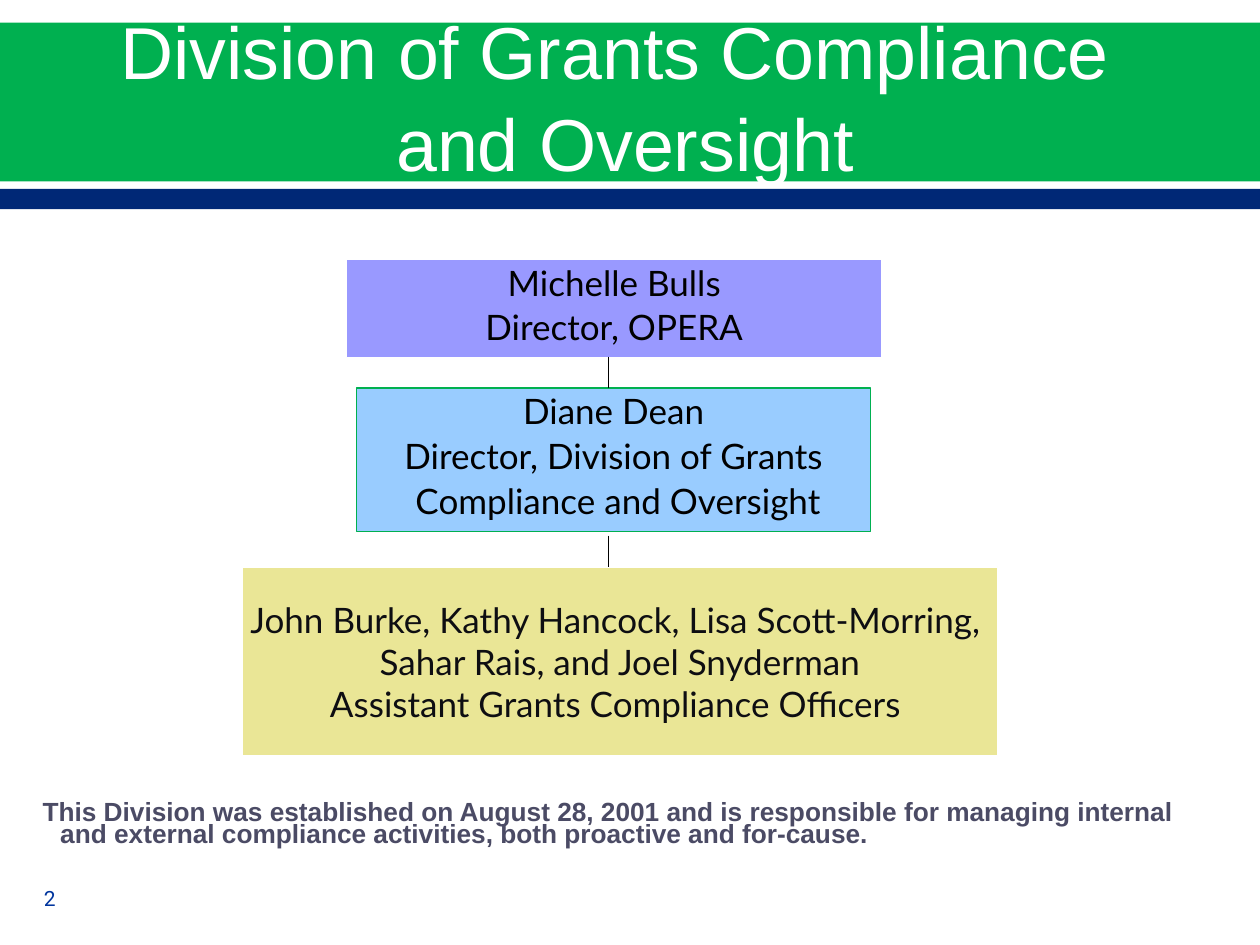
from lxml.etree import SubElement
from pptx import Presentation
from pptx.dml.color import RGBColor
from pptx.enum.shapes import MSO_CONNECTOR, MSO_SHAPE
from pptx.enum.text import MSO_ANCHOR, MSO_AUTO_SIZE, PP_ALIGN
from pptx.oxml.ns import qn
from pptx.util import Inches, Pt

COLORS = {
    "green": "00B050", "navy": "002876", "white": "FFFFFF", "black": "000000",
    "violet": "9999FF", "sky": "99CCFF", "sand": "EAE696", "ink": "0E0E12",
    "slate": "4B4B65", "blue": "00359E",
}


def color(name):
    """Return the named colour."""
    return RGBColor.from_string(COLORS[name])


def style_text(frame, font, size, ink, align=PP_ALIGN.LEFT, bold=False, spacing=None, before=0):
    """Format every paragraph and run of a text frame."""
    for para in frame.paragraphs:
        para.alignment = align
        para.line_spacing = spacing
        para.space_before = Pt(before)
        for span in para.runs:
            span.font.name = font
            span.font.size = Pt(size)
            span.font.bold = bold
            span.font.color.rgb = color(ink)


def add_rectangle(page, left, top, width, height, fill, line=None):
    """Add a flat rectangle, outlined if a line colour is given."""
    box = page.shapes.add_shape(
        MSO_SHAPE.RECTANGLE, Inches(left), Inches(top), Inches(width), Inches(height))
    box.shadow.inherit = False
    box.fill.solid()
    box.fill.fore_color.rgb = color(fill)
    if line:
        box.line.color.rgb = color(line)
        box.line.width = Pt(0.75)
    else:
        box.line.fill.background()
    return box


def add_role(page, place, fill, line, text, ink="black", anchor=MSO_ANCHOR.TOP,
             wrap=True, spacing=0.9, before=4):
    """Add one box of the organisation chart."""
    frame = add_rectangle(page, *place, fill, line).text_frame
    frame.text = text
    frame.word_wrap = wrap
    frame.vertical_anchor = anchor
    style_text(frame, "Lato", 20, ink, PP_ALIGN.CENTER, spacing=spacing, before=before)


def add_link(page, top, bottom):
    """Add a vertical line between two levels of the chart."""
    link = page.shapes.add_connector(
        MSO_CONNECTOR.STRAIGHT, Inches(4.83), Inches(top), Inches(4.83), Inches(bottom))
    link.line.color.rgb = color("black")
    link.line.width = Pt(0.75)
    SubElement(link.element.spPr, qn("a:effectLst"))


def add_text(page, left, top, width, height, text, anchor=MSO_ANCHOR.TOP):
    """Add a wrapping text box and return its frame."""
    frame = page.shapes.add_textbox(
        Inches(left), Inches(top), Inches(width), Inches(height)).text_frame
    frame.word_wrap = True
    frame.vertical_anchor = anchor
    frame.text = text
    return frame


def place_title(page, text):
    """Fill the title placeholder and bring it in front of the bands."""
    title = page.shapes.title
    title.left, title.top = Inches(0.25), Inches(0)
    title.width, title.height = Inches(9.42), Inches(1.5)
    frame = title.text_frame
    frame.text = text
    frame.auto_size = MSO_AUTO_SIZE.NONE
    frame.vertical_anchor = MSO_ANCHOR.MIDDLE
    style_text(frame, "Arial", 42, "white", PP_ALIGN.CENTER, spacing=1.04)
    title.element.getparent().append(title.element)


def main():
    """Build the slide and save it."""
    deck = Presentation()
    deck.slide_width, deck.slide_height = Inches(10), Inches(7.5)
    page = deck.slides.add_slide(deck.slide_layouts[5])

    add_rectangle(page, 0, 0.18, 10, 1.26, "green")
    add_rectangle(page, 0, 1.5, 10, 0.16, "navy")
    place_title(page, "Division of Grants Compliance \vand Oversight")

    mission = add_text(
        page, 0, 6.33, 9.67, 0.5,
        "This Division was established on August 28, 2001 and is responsible for managing "
        "internal and external compliance activities, both proactive and for-cause.")
    style_text(mission, "Arial", 15, "slate", bold=True, spacing=0.7, before=4.5)
    indents = mission.paragraphs[0]._p.get_or_add_pPr()
    indents.set("marL", str(Inches(0.38)))
    indents.set("indent", str(Inches(-0.14)))

    add_role(page, (2.75, 2.06, 4.25, 0.78), "violet", "white",
             "Michelle Bulls\nDirector, OPERA")
    add_role(page, (2.83, 3.08, 4.08, 1.14), "sky", "green",
             "Diane Dean\nDirector, Division of Grants\n Compliance and Oversight")
    add_role(page, (1.92, 4.5, 6, 1.5), "sand", "white",
             "John Burke, Kathy Hancock, Lisa Scott-Morring, \n"
             "Sahar Rais, and Joel Snyderman\nAssistant Grants Compliance Officers ",
             "ink", MSO_ANCHOR.MIDDLE, wrap=False, spacing=None, before=0)
    add_link(page, 2.83, 3.08)
    add_link(page, 4.25, 4.5)

    number = add_text(page, 0.25, 6.93, 2.33, 0.4, "2", MSO_ANCHOR.MIDDLE)
    style_text(number, "Roboto", 12, "blue")
    deck.save("out.pptx")


if __name__ == "__main__":
    main()
